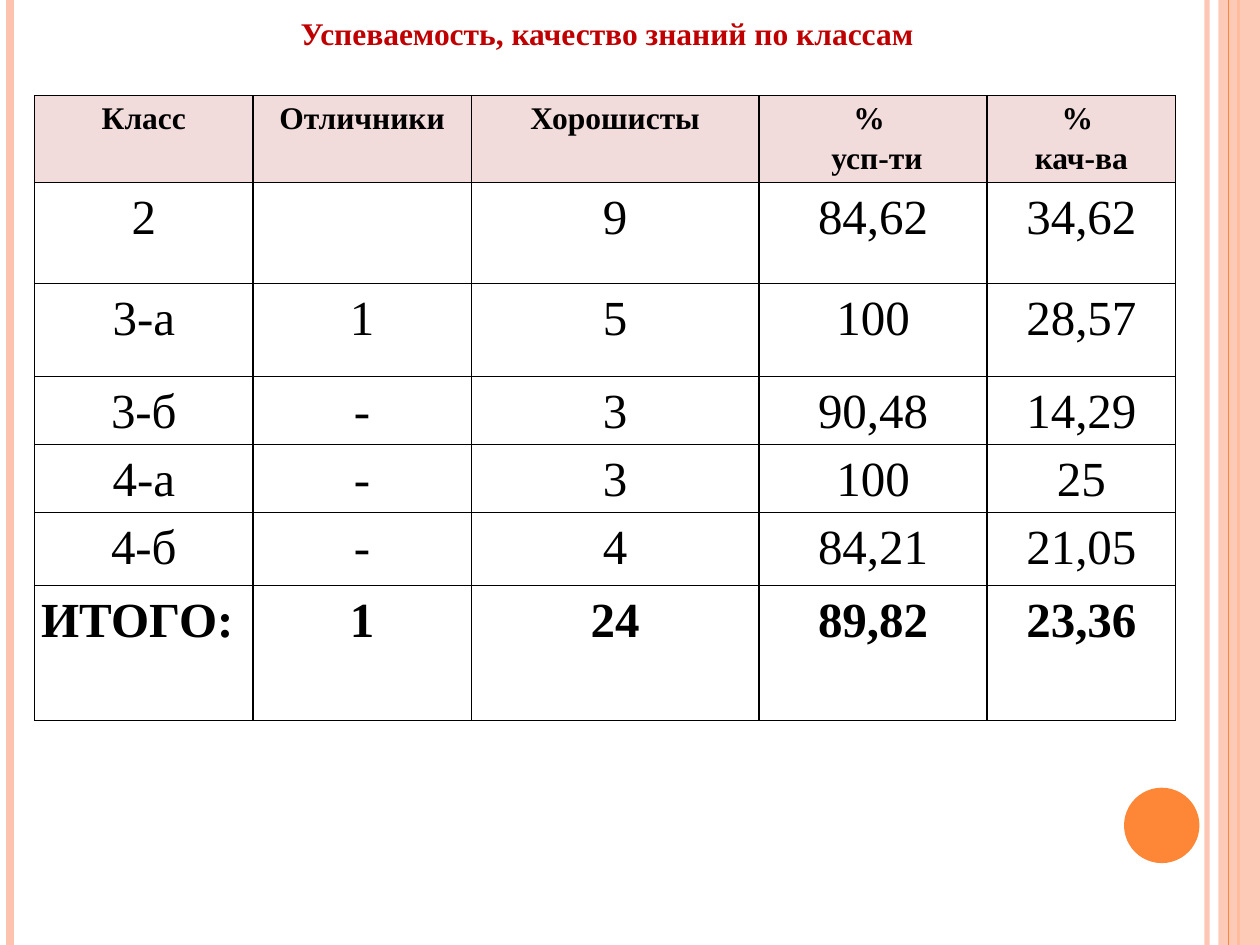
from pptx import Presentation
from pptx.dml.color import RGBColor
from pptx.enum.shapes import MSO_CONNECTOR, MSO_SHAPE
from pptx.enum.text import MSO_ANCHOR, MSO_AUTO_SIZE, PP_ALIGN
from pptx.oxml import parse_xml
from pptx.oxml.ns import nsdecls, qn
from pptx.oxml.xmlchemy import OxmlElement
from pptx.util import Cm, Pt

LINE = MSO_CONNECTOR.STRAIGHT
RECT = MSO_SHAPE.RECTANGLE
OVAL = MSO_SHAPE.OVAL
MID = MSO_ANCHOR.MIDDLE
GROW = MSO_AUTO_SIZE.SHAPE_TO_FIT_TEXT
LEFT = PP_ALIGN.LEFT
MIDDLE = PP_ALIGN.CENTER

theme = {
    "red": "C00000",
    "black": "000000",
    "head": "F2DBDB",
    "pink": "FEC3AE",
    "orange": "FE8637",
    "font": "Times New Roman",
    "small": Pt(18),
    "large": Pt(28),
}


def style(para, size, bold, color, align):
    para.alignment = align
    font = para.font
    for run in para.runs:
        font = run.font
        for key, value in {"name": theme["font"], "size": size, "bold": bold}.items():
            setattr(font, key, value)
        font.color.rgb = RGBColor.from_string(theme[color])


def fade(shape, percent):
    for color in shape.element.spPr.iter(qn("a:srgbClr")):
        alpha = OxmlElement("a:alpha")
        alpha.set("val", str(percent * 1000))
        color.append(alpha)


deck = Presentation()
deck.slide_width, deck.slide_height = Cm(25.4), Cm(19.05)
slide = deck.slides.add_slide(deck.slide_layouts[5])
shapes = slide.shapes

bands = [
    ("line", 24.33, 3, "pink", 93),
    ("line", 0.21, 4.5, "pink", 100),
    ("line", 24.97, 1.5, "orange", 100),
    ("rect", 24.56, 0.84, "pink", 87),
    ("line", 24.77, 0.75, "orange", 100),
]
for kind, x, width, color, alpha in bands:
    rgb = RGBColor.from_string(theme[color])
    if kind == "line":
        band = shapes.add_connector(LINE, Cm(x), 0, Cm(x), deck.slide_height)
        band.line.width = Pt(width)
        band.line.color.rgb = rgb
        band.element.spPr.append(OxmlElement("a:effectLst"))
    else:
        band = shapes.add_shape(RECT, Cm(x), 0, Cm(width), deck.slide_height)
        band.shadow.inherit = False
        band.fill.solid()
        band.fill.fore_color.rgb = rgb
        band.line.fill.background()
    if alpha < 100:
        fade(band, alpha)

dot = shapes.add_shape(OVAL, Cm(22.66), Cm(15.88), Cm(1.52), Cm(1.52))
dot.shadow.inherit = False
dot.fill.solid()
dot.fill.fore_color.rgb = RGBColor.from_string(theme["orange"])
dot.line.fill.background()

title = shapes.title
place = {"left": Cm(5.74), "top": Cm(0.15), "width": Cm(13), "height": Cm(1.02)}
for key, value in place.items():
    setattr(title, key, value)
frame = title.text_frame
frame.text = "Успеваемость, качество знаний по классам"
for key, value in {"word_wrap": False, "auto_size": GROW, "vertical_anchor": MID}.items():
    setattr(frame, key, value)
style(frame.paragraphs[0], theme["small"], True, "red", MIDDLE)

rows = [
    ["Класс", "Отличники", "Хорошисты", "% \n усп-ти", "% \nкач-ва"],
    ["2", "", "9", "84,62", "34,62"],
    ["3-а", "1", "5", "100", "28,57"],
    ["3-б", "-", "3", "90,48", "14,29"],
    ["4-а", "-", "3", "100", "25"],
    ["4-б", "-", "4", "84,21", "21,05"],
    ["ИТОГО:", "1", "24", "89,82", "23,36"],
]
widths = [4.4, 4.4, 5.8, 4.6, 3.8]
heights = [1.75, 2.03, 1.88, 1.37, 1.37, 1.47, 2.72]
last = len(rows) - 1
table = shapes.add_table(
    len(rows), len(widths), Cm(0.7), Cm(1.93), Cm(sum(widths)), Cm(sum(heights))
).table
table.first_row = table.horz_banding = False
for col, width in zip(table.columns, widths):
    col.width = Cm(width)
for row, height in zip(table.rows, heights):
    row.height = Cm(height)

inset = {
    "margin_left": Cm(0.13),
    "margin_right": Cm(0.13),
    "margin_top": 0,
    "margin_bottom": 0,
}
for r, words in enumerate(rows):
    for c, word in enumerate(words):
        cell = table.cell(r, c)
        for key, value in inset.items():
            setattr(cell, key, value)
        cell.text = word
        size = theme["large"] if r else theme["small"]
        align = LEFT if (r, c) == (last, 0) else MIDDLE
        for para in cell.text_frame.paragraphs:
            para.line_spacing = 1.15
            style(para, size, r in (0, last), "black", align)
        props = cell._tc.get_or_add_tcPr()
        for side in ("lnL", "lnR", "lnT", "lnB"):
            props.append(parse_xml(
                f'<a:{side} {nsdecls("a")} w="{Pt(1)}"><a:solidFill>'
                f'<a:srgbClr val="{theme["black"]}"/></a:solidFill></a:{side}>'
            ))
        if r:
            cell.fill.background()
        else:
            cell.fill.solid()
            cell.fill.fore_color.rgb = RGBColor.from_string(theme["head"])

deck.save("out.pptx")
